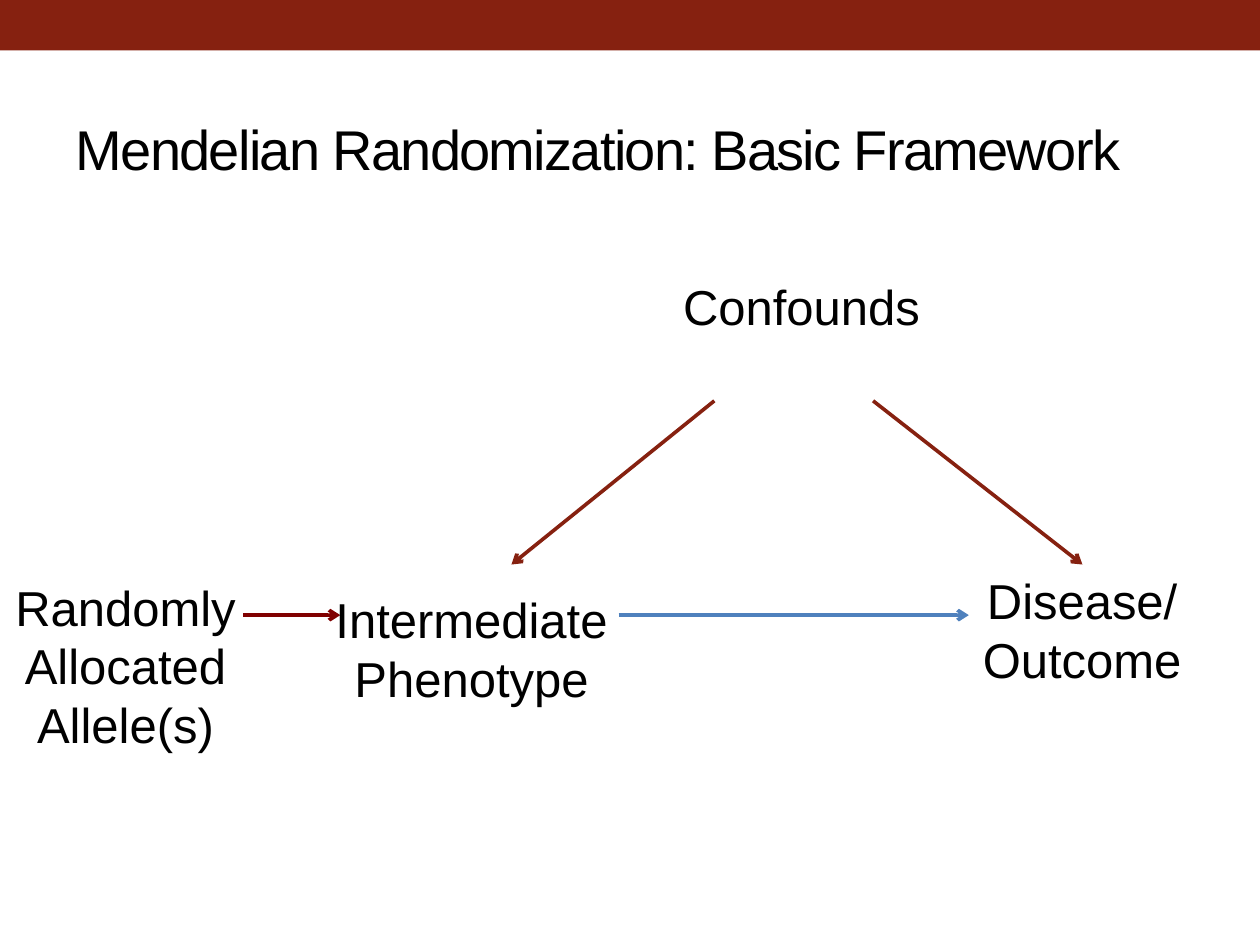
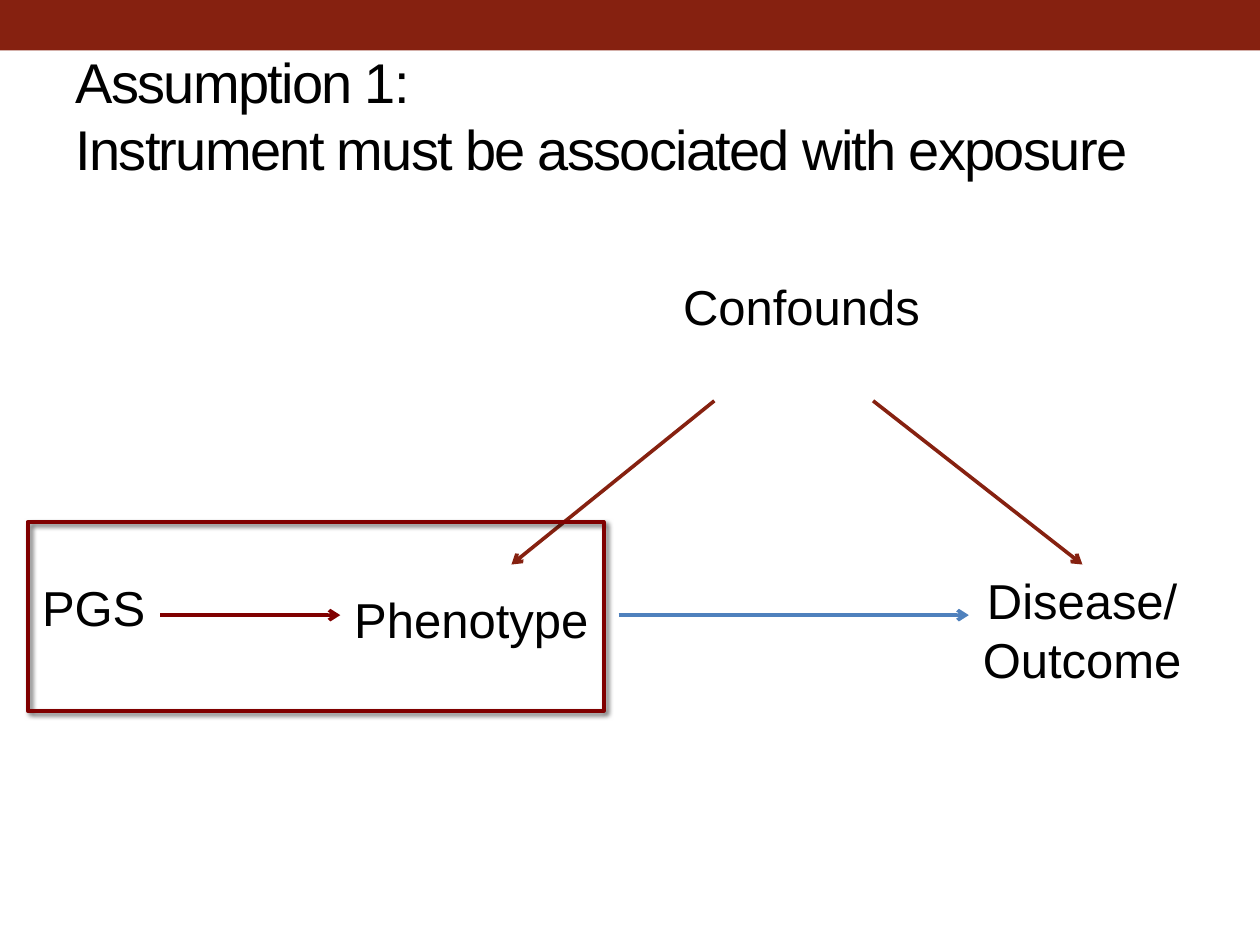
from lxml import etree
from pptx import Presentation
from pptx import util as u
from pptx.dml.color import RGBColor
from pptx.enum import shapes, text
from pptx.oxml import parse_xml
from pptx.oxml.ns import nsdecls, qn

BRICK, MAROON, BLUE, BLACK = "862110", "800000", "4F81BD", "000000"
FONT = "Arial"
ARROW_ROW = 12.4

SHARED_LABELS = [
    ("Disease/\nOutcome", 19.53, 11.38, 4.57, 2.64),
    ("Confounds", 13.49, 5.44, 5.33, 1.45),
]
SHARED_ARROWS = [
    ((12.47, ARROW_ROW), (19.53, ARROW_ROW), BLUE),
    ((14.4, 8.08), (10.31, 11.38), BRICK),
    ((17.6, 8.08), (21.82, 11.38), BRICK),
]
SLIDES = [
    {
        "title": "Mendelian Randomization: Basic Framework",
        "instrument_end": 4.9,
        "labels": [
            ("Intermediate\nPhenotype", 6.48, 11.76, 6.05, 2.64),
            ("Randomly\nAllocated\nAllele(s)", 0.03, 11.51, 5, 5.05),
        ],
        "frame": None,
    },
    {
        "title": "Assumption 1:\vInstrument must be associated with exposure",
        "instrument_end": 3.23,
        "labels": [
            ("Phenotype", 6.86, 11.76, 5.28, 1.45),
            ("PGS", 0.58, 11.51, 2.62, 1.45),
        ],
        "frame": (0.56, 10.52, 11.61, 3.81),
    },
]


def cm(*lengths):
    return [u.Cm(length) for length in lengths]


def color(hex_string):
    return RGBColor.from_string(hex_string)


def style_paragraphs(text_frame, size, alignment):
    for paragraph in text_frame.paragraphs:
        paragraph.alignment = alignment
        paragraph.font.name = FONT
        paragraph.font.size = u.Pt(size)
        paragraph.font.color.rgb = color(BLACK)


def add_band(slide, layout, width):
    band = slide.shapes.add_shape(
        shapes.MSO_SHAPE.RECTANGLE, 0, 0, width, u.Cm(1.02))
    band.shadow.inherit = False
    band.fill.solid()
    band.fill.fore_color.rgb = color(BRICK)
    band.line.fill.background()
    layout.shapes._spTree.insert(2, band._element)


def set_title(slide, words):
    title = slide.shapes.title
    title.left, title.top, title.width, title.height = cm(1.27, 2, 22.86, 1.96)
    frame = title.text_frame
    frame.text = words
    frame.auto_size = text.MSO_AUTO_SIZE.NONE
    frame.vertical_anchor = text.MSO_ANCHOR.BOTTOM
    frame.margin_bottom = u.Cm(0.3)
    style_paragraphs(frame, 32, text.PP_ALIGN.LEFT)
    for run in frame.paragraphs[0].runs:
        run._r.get_or_add_rPr().set("spc", "-100")


def add_label(slide, words, *box):
    frame = slide.shapes.add_textbox(*cm(*box)).text_frame
    frame.text = words
    frame.word_wrap = False
    frame.auto_size = text.MSO_AUTO_SIZE.NONE
    style_paragraphs(frame, 28, text.PP_ALIGN.CENTER)


def add_arrow(slide, start, end, hex_string):
    arrow = slide.shapes.add_connector(
        shapes.MSO_CONNECTOR.STRAIGHT, *cm(*start, *end))
    arrow.line.color.rgb = color(hex_string)
    arrow.line.width = u.Pt(2.08)
    etree.SubElement(arrow.line._get_or_add_ln(), qn("a:tailEnd"), type="arrow")
    etree.SubElement(arrow._element.spPr, qn("a:effectLst"))


def add_frame(slide, box):
    frame = slide.shapes.add_shape(shapes.MSO_SHAPE.RECTANGLE, *cm(*box))
    frame.fill.background()
    frame.line.color.rgb = color(MAROON)
    frame.line.width = u.Pt(2.25)
    frame._element.spPr.append(parse_xml(
        f'<a:effectLst {nsdecls("a")}>'
        f'<a:outerShdw blurRad="{u.Pt(3)}" dist="{u.Pt(2)}" dir="2700000">'
        f'<a:srgbClr val="{BLACK}"><a:alpha val="60000"/></a:srgbClr>'
        '</a:outerShdw></a:effectLst>'))


def main():
    presentation = Presentation()
    presentation.slide_width, presentation.slide_height = cm(25.4, 19.05)
    layout = presentation.slide_layouts.get_by_name("Title Only")
    for content in SLIDES:
        slide = presentation.slides.add_slide(layout)
        if len(presentation.slides) == 1:
            add_band(slide, layout, presentation.slide_width)
        set_title(slide, content["title"])
        instrument_arrow = (
            (content["instrument_end"], ARROW_ROW), (6.86, ARROW_ROW), MAROON)
        for arrow in SHARED_ARROWS + [instrument_arrow]:
            add_arrow(slide, *arrow)
        for label in SHARED_LABELS + content["labels"]:
            add_label(slide, *label)
        if content["frame"]:
            add_frame(slide, content["frame"])
    presentation.save("out.pptx")


if __name__ == "__main__":
    main()
